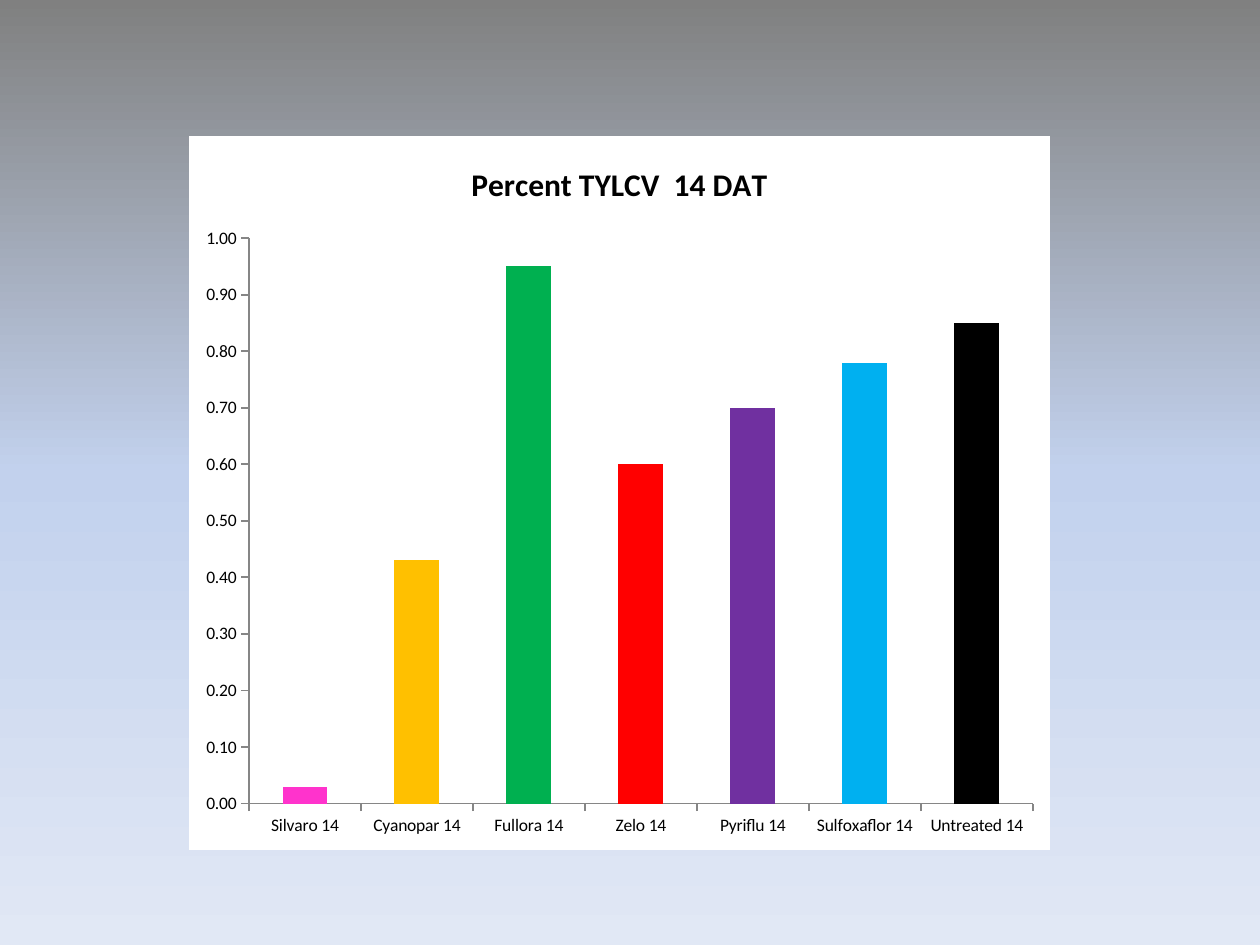
from copy import deepcopy
from dataclasses import dataclass

from lxml import etree
from pptx import Presentation, util as u
from pptx.chart.data import CategoryChartData
from pptx.dml.color import RGBColor
from pptx.enum import chart as charts
from pptx.oxml import ns

EMU_PER_PX = 914400 / 126


@dataclass(frozen=True)
class Theme:
    font: str = "Calibri"
    title_size: int = 18
    label_size: int = 10
    ink: str = "000000"
    panel: str = "FFFFFF"
    axis: str = "868686"
    sky: tuple = ((0, "808080"), (0.5, "C2D1ED"), (1, "E1E8F5"))


THEME = Theme()

# Treatment, share of infected plants, bar colour
TREATMENTS = [
    ("Silvaro 14", 0.03, "FF33CC"),
    ("Cyanopar 14", 0.43, "FFC000"),
    ("Fullora 14", 0.95, "00B050"),
    ("Zelo 14", 0.6, "FF0000"),
    ("Pyriflu 14", 0.7, "7030A0"),
    ("Sulfoxaflor 14", 0.78, "00B0F0"),
    ("Untreated 14", 0.85, "000000"),
]


def px(length):
    return u.Emu(round(length * EMU_PER_PX))


def rgb(code):
    return RGBColor.from_string(code)


def style_font(font, size, bold=False):
    font.name = THEME.font
    font.size = u.Pt(size)
    font.bold = bold
    font.color.rgb = rgb(THEME.ink)


def paint_background(page):
    fill = page.background.fill
    fill.gradient()
    fill.gradient_angle = 270
    stop_list = page.element.find(".//" + ns.qn("a:gsLst"))
    while len(stop_list) < len(THEME.sky):
        stop_list.append(deepcopy(stop_list[0]))
    for stop, (position, colour) in zip(fill.gradient_stops, THEME.sky):
        stop.position = position
        stop.color.rgb = rgb(colour)


def fill_area(parent, before):
    """Give a chart or plot area a plain fill, ahead of the named siblings."""
    properties = etree.Element(ns.qn("c:spPr"))
    solid = etree.SubElement(properties, ns.qn("a:solidFill"))
    etree.SubElement(solid, ns.qn("a:srgbClr"), val=THEME.panel)
    line = etree.SubElement(properties, ns.qn("a:ln"))
    etree.SubElement(line, ns.qn("a:noFill"))
    follower = next((child for child in parent
                     if child.tag in map(ns.qn, before)), None)
    if follower is None:
        parent.append(properties)
    else:
        follower.addprevious(properties)


def style_axis(axis):
    axis.has_major_gridlines = False
    axis.major_tick_mark = charts.XL_TICK_MARK.OUTSIDE
    axis.minor_tick_mark = charts.XL_TICK_MARK.NONE
    axis.format.line.color.rgb = rgb(THEME.axis)
    axis.format.line.width = u.Pt(1)
    style_font(axis.tick_labels.font, THEME.label_size)


def add_title(chart, wording):
    chart.has_title = True
    chart.chart_title.include_in_layout = False
    span = chart.chart_title.text_frame.paragraphs[0].add_run()
    span.text = wording
    style_font(span.font, THEME.title_size, bold=True)


def add_bar_chart(page, title, rows, left, top, width, height):
    data = CategoryChartData(number_format="0.00")
    data.categories = [name for name, _, _ in rows]
    data.add_series("Series 1", [value for _, value, _ in rows])
    chart = page.shapes.add_chart(
        charts.XL_CHART_TYPE.COLUMN_CLUSTERED,
        px(left), px(top), px(width), px(height), data).chart
    chart.has_legend = False
    style_font(chart.font, THEME.label_size)
    add_title(chart, title)

    plot = chart.plots[0]
    plot.gap_width = 150
    plot.vary_by_categories = False
    for index, (_, _, colour) in enumerate(rows):
        bar = plot.series[0].points[index].format.fill
        bar.solid()
        bar.fore_color.rgb = rgb(colour)

    style_axis(chart.category_axis)
    style_axis(chart.value_axis)
    chart.value_axis.minimum_scale = 0
    chart.value_axis.maximum_scale = 1
    chart.value_axis.major_unit = 0.1
    chart.value_axis.tick_labels.number_format = "0.00"
    chart.value_axis.tick_labels.number_format_is_linked = False

    space = chart.element
    fill_area(space, ("c:txPr", "c:externalData"))
    fill_area(space.find(".//" + ns.qn("c:plotArea")), ())


def main():
    deck = Presentation()
    deck.slide_width, deck.slide_height = px(1260), px(945)
    page = deck.slides.add_slide(deck.slide_layouts[6])
    paint_background(page)
    add_bar_chart(page, "Percent TYLCV  14 DAT", TREATMENTS,
                  left=189, top=136, width=861, height=714)
    deck.save("out.pptx")


if __name__ == "__main__":
    main()
